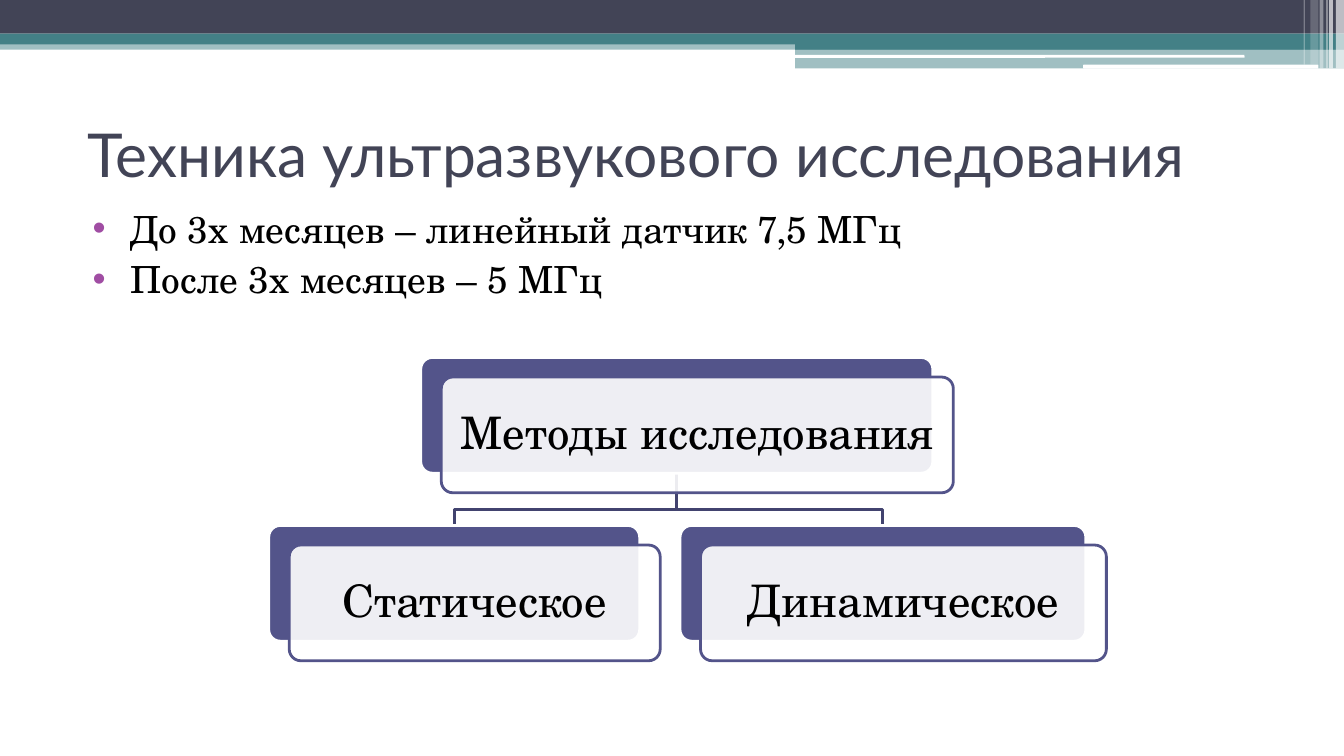
"""Build the slide on ultrasound technique with its tree of examination methods."""
from lxml import etree
from pptx import Presentation
from pptx.dml.color import RGBColor
from pptx.enum.shapes import MSO_SHAPE
from pptx.enum.text import MSO_ANCHOR, MSO_AUTO_SIZE, PP_ALIGN
from pptx.oxml.ns import qn
from pptx.util import Pt

RECT, ROUNDED = MSO_SHAPE.RECTANGLE, MSO_SHAPE.ROUNDED_RECTANGLE
MIDDLE, NO_FIT = MSO_ANCHOR.MIDDLE, MSO_AUTO_SIZE.NONE
LEFT, CENTER = PP_ALIGN.LEFT, PP_ALIGN.CENTER

WHITE = RGBColor(0xFF, 0xFF, 0xFF)
BLACK = RGBColor(0, 0, 0)
SLATE = RGBColor(0x42, 0x44, 0x56)
TEAL = RGBColor(0x43, 0x80, 0x86)
INDIGO = RGBColor(0x53, 0x54, 0x8A)
BRANCH = RGBColor(0x42, 0x43, 0x6F)
PURPLE = RGBColor(0xA0, 0x4D, 0xA3)
TITLE_FONT, BODY_FONT = "Lato", "TeX Gyre Schola"

TITLE = "Техника ультразвукового исследования"
PROBES = ["До 3х месяцев – линейный датчик 7,5 МГц", "После 3х месяцев – 5 МГц"]
ROOT = ("Методы исследования", 225.4, 191.5, 274.3)
METHODS = [
    ("Статическое", 144, 281.5, 198.7),
    ("Динамическое", 364.3, 281.5, 217.4),
]
CARD_HEIGHT, SHIFT_X, SHIFT_Y, BEND_Y = 62, 11, 10.5, 273

BANDS = [
    (RECT, 0, 21.6, 720, 5.04, TEAL, 50),
    (RECT, 0, 0, 720, 18, SLATE, 100),
    (RECT, 0, 18, 720, 5.76, TEAL, 100),
    (RECT, 426, 21.6, 294, 5.04, TEAL, 100),
    (RECT, 426, 25.9, 294, 10.8, TEAL, 50),
    (ROUNDED, 425.5, 29.4, 241.2, 1.6, WHITE, 100),
    (ROUNDED, 580.3, 34.6, 126, 2.2, WHITE, 100),
]
STRIPES = [
    (715.7, 4.3, 36.7, 65),
    (712, 2, 36.7, 65),
    (710.6, 0.7, 36.7, 60),
    (707, 2, 36.7, 40),
    (702, 4.3, 34.6, 20),
    (698.4, 0.7, 34.6, 30),
]


def add_block(slide, preset, left, top, width, height, color, opacity=100, line=None):
    block = slide.shapes.add_shape(preset, Pt(left), Pt(top), Pt(width), Pt(height))
    block.shadow.inherit = False
    block.fill.solid()
    block.fill.fore_color.rgb = color
    if opacity < 100:
        tint = block.fill._xPr.find(".//" + qn("a:srgbClr"))
        etree.SubElement(tint, qn("a:alpha"), val=str(opacity * 1000))
    if line is None:
        block.line.fill.background()
    else:
        block.line.color.rgb = line
        block.line.width = Pt(1.5)
    return block


def set_font(paragraph, name, size, color):
    paragraph.font.name = name
    paragraph.font.size = Pt(size)
    paragraph.font.color.rgb = color


def place(placeholder, left, top, width, height):
    placeholder.left, placeholder.top = Pt(left), Pt(top)
    placeholder.width, placeholder.height = Pt(width), Pt(height)
    placeholder.text_frame.auto_size = NO_FIT


def add_title(slide):
    title = slide.shapes.title
    place(title, 39.6, 50.4, 648, 63.4)
    title.text_frame.text = TITLE
    title.text_frame.vertical_anchor = MIDDLE
    heading = title.text_frame.paragraphs[0]
    heading.alignment = LEFT
    set_font(heading, TITLE_FONT, 32.4, SLATE)


def add_probes(slide):
    body = slide.placeholders[1]
    place(body, 33.8, 106.6, 648, 102.2)
    body.text_frame.text = "\n".join(PROBES)
    for probe in body.text_frame.paragraphs:
        props = probe._p.get_or_add_pPr()
        props.set("marL", str(Pt(28.8)))
        props.set("indent", str(Pt(-20.2)))
        bullet_color = etree.SubElement(props, qn("a:buClr"))
        etree.SubElement(bullet_color, qn("a:srgbClr"), val=str(PURPLE))
        etree.SubElement(props, qn("a:buChar"), char="•")
        probe.space_before = Pt(3)
        set_font(probe, BODY_FONT, 20, BLACK)


def add_branch(slide, method):
    _, root_left, root_top, root_width = ROOT
    _, left, top, width = method
    start_x, end_x = root_left + root_width / 2, left + width / 2
    pen = slide.shapes.build_freeform(Pt(start_x), Pt(root_top + CARD_HEIGHT))
    bends = [(start_x, BEND_Y), (end_x, BEND_Y), (end_x, top)]
    pen.add_line_segments([(Pt(x), Pt(y)) for x, y in bends], close=False)
    branch = pen.convert_to_shape()
    branch.shadow.inherit = False
    branch.fill.background()
    branch.line.color.rgb = BRANCH
    branch.line.width = Pt(1.5)


def add_card(slide, label, left, top, width):
    back = add_block(slide, ROUNDED, left, top, width, CARD_HEIGHT, INDIGO, line=WHITE)
    front = add_block(slide, ROUNDED, left + SHIFT_X, top + SHIFT_Y, width, CARD_HEIGHT,
                      WHITE, 90, INDIGO)
    for card in (back, front):
        card.adjustments[0] = 0.1
    frame = front.text_frame
    frame.margin_left = frame.margin_right = Pt(7.2)
    frame.vertical_anchor = MIDDLE
    frame.text = label
    caption = frame.paragraphs[0]
    caption.alignment = CENTER
    caption.line_spacing = 0.9
    set_font(caption, BODY_FONT, 24, BLACK)


def main():
    deck = Presentation()
    deck.slide_width, deck.slide_height = Pt(720), Pt(405)
    slide = deck.slides.add_slide(deck.slide_layouts[1])
    for band in BANDS:
        add_block(slide, *band)
    for left, width, height, opacity in STRIPES:
        add_block(slide, RECT, left, 0, width, height, WHITE, opacity)
    add_title(slide)
    add_probes(slide)
    for method in METHODS:
        add_branch(slide, method)
    for node in [ROOT, *METHODS]:
        add_card(slide, *node)
    deck.save("out.pptx")


if __name__ == "__main__":
    main()
